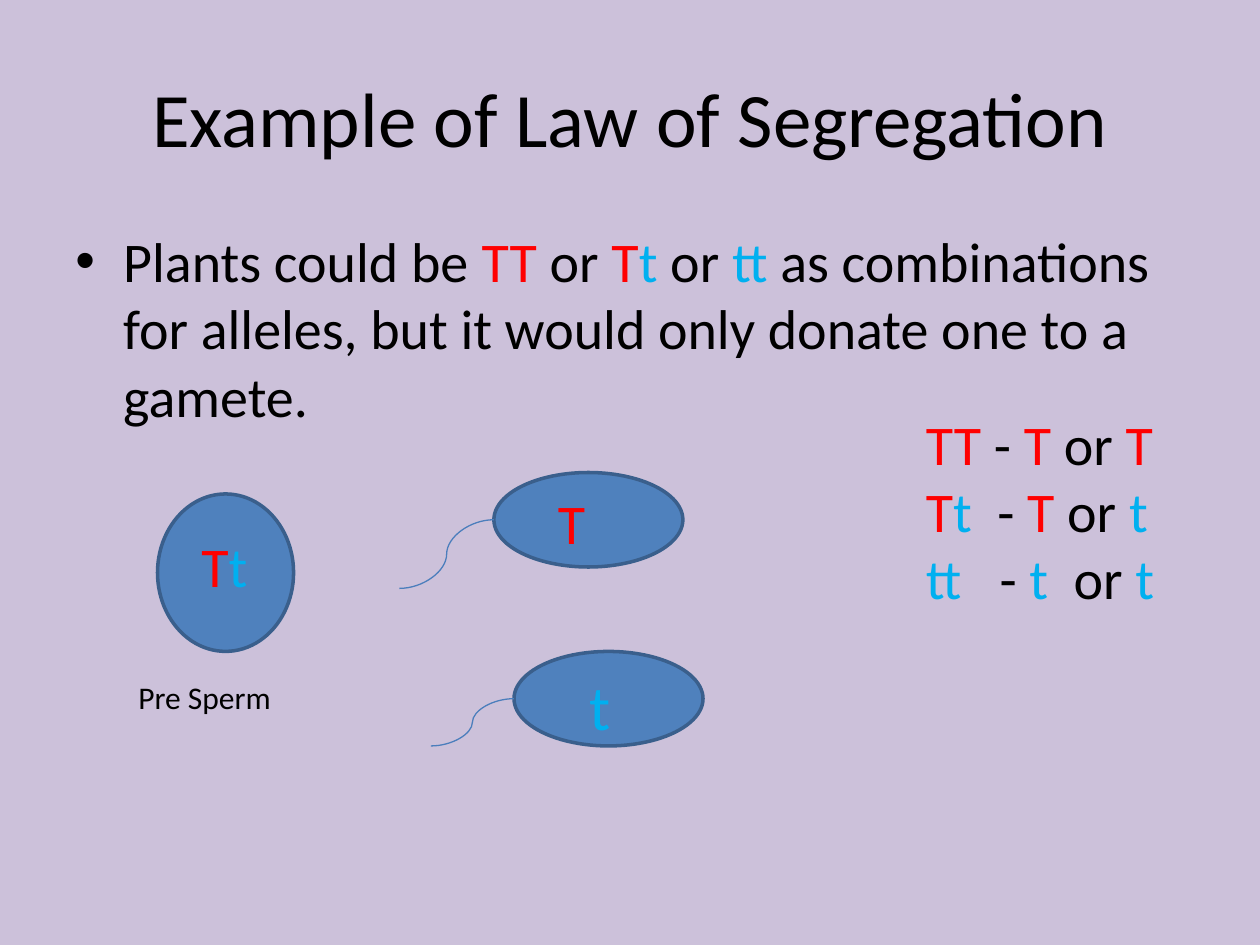
from dataclasses import dataclass

from lxml.etree import SubElement
from pptx import Presentation
from pptx.dml.color import RGBColor
from pptx.enum.shapes import MSO_CONNECTOR, MSO_SHAPE
from pptx.enum.text import MSO_ANCHOR, MSO_AUTO_SIZE, PP_ALIGN
from pptx.oxml.ns import qn
from pptx.util import Inches, Pt


@dataclass(frozen=True)
class Theme:
    font: str = "Calibri"
    background: str = "CCC1DA"
    ink: str = "000000"
    dominant: str = "FF0000"
    recessive: str = "00B0F0"
    cell: str = "4F81BD"
    outline: str = "3A5F8C"
    tail: str = "4B7EBC"
    title_size: int = 44
    body_size: int = 32
    large_size: int = 36
    label_size: int = 18


THEME = Theme()
INK, TALL, SHORT = THEME.ink, THEME.dominant, THEME.recessive

STATEMENT = [
    ("Plants could be ", INK), ("TT ", TALL), ("or ", INK), ("T", TALL),
    ("t", SHORT), (" or ", INK), ("tt", SHORT),
    (" as combinations for alleles, but it would only donate one to a gamete.", INK),
]
OUTCOMES = [
    [("TT", TALL), (" - ", INK), ("T", TALL), (" or", INK), (" T", TALL)],
    [("T", TALL), ("t", SHORT), ("  - ", INK), ("T ", TALL), ("or ", INK), ("t", SHORT)],
    [("tt   ", SHORT), ("- ", INK), ("t  ", SHORT), ("or ", INK), ("t", SHORT)],
]


def set_format(target, values):
    for name, value in values.items():
        setattr(target, name, value)


def write_spans(para, spans, size):
    for text, color in spans:
        span = para.add_run()
        span.text = text
        set_format(span.font, {"name": THEME.font, "size": Pt(size)})
        span.font.color.rgb = RGBColor.from_string(color)


def add_title(page, text):
    title = page.shapes.title
    set_format(title, {"left": Inches(0.5), "top": Inches(0.3),
                       "width": Inches(9), "height": Inches(1.25)})
    title.text_frame.vertical_anchor = MSO_ANCHOR.MIDDLE
    para = title.text_frame.paragraphs[0]
    para.alignment = PP_ALIGN.CENTER
    write_spans(para, [(text, INK)], THEME.title_size)


def add_text(page, place, lines, size=THEME.body_size, auto_size=MSO_AUTO_SIZE.SHAPE_TO_FIT_TEXT):
    box = page.shapes.add_textbox(*map(Inches, place))
    frame = box.text_frame
    set_format(frame, {"word_wrap": True, "auto_size": auto_size})
    for index, spans in enumerate(lines):
        para = frame.add_paragraph() if index else frame.paragraphs[0]
        write_spans(para, spans, size)
    return box


def add_bullet(para):
    properties = para._p.get_or_add_pPr()
    properties.set("marL", str(Inches(0.38)))
    properties.set("indent", str(Inches(-0.38)))
    SubElement(properties, qn("a:buFont"), typeface="Arial")
    SubElement(properties, qn("a:buChar"), char="•")


def add_cell(page, place):
    cell = page.shapes.add_shape(MSO_SHAPE.OVAL, *map(Inches, place))
    cell.shadow.inherit = False
    cell.fill.solid()
    cell.fill.fore_color.rgb = RGBColor.from_string(THEME.cell)
    cell.line.color.rgb = RGBColor.from_string(THEME.outline)
    cell.line.width = Pt(2)


def add_tail(page, place, end):
    left, top, _, height = place
    points = (left, top + height / 2, *end)
    tail = page.shapes.add_connector(MSO_CONNECTOR.CURVE, *map(Inches, points))
    tail.line.color.rgb = RGBColor.from_string(THEME.tail)
    tail.line.width = Pt(0.75)
    SubElement(tail._element.spPr, qn("a:effectLst"))


def add_sperm(page, place, tail_end, letter_place, letter, size):
    add_cell(page, place)
    add_text(page, letter_place, [[letter]], size)
    add_tail(page, place, tail_end)


def main():
    deck = Presentation()
    set_format(deck, {"slide_width": Inches(10), "slide_height": Inches(7.5)})
    page = deck.slides.add_slide(deck.slide_layouts[5])
    page.background.fill.solid()
    page.background.fill.fore_color.rgb = RGBColor.from_string(THEME.background)

    # Title and statement
    add_title(page, "Example of Law of Segregation")
    body = add_text(page, (0.5, 1.75, 9, 4.95), [STATEMENT], auto_size=MSO_AUTO_SIZE.NONE)
    statement = body.text_frame.paragraphs[0]
    statement.space_before = Pt(THEME.body_size * 0.2)
    add_bullet(statement)

    # Parent cell
    add_cell(page, (1.25, 3.92, 1.08, 1.25))
    add_text(page, (1.5, 4.17, 0.67, 0.64), [[("T", TALL), ("t", SHORT)]])
    add_text(page, (1, 5.33, 1.5, 0.4), [[("Pre Sperm", INK)]], THEME.label_size)

    # Possible alleles for each combination
    add_text(page, (7.25, 3.2, 2.25, 1.72), OUTCOMES)

    # Gametes
    add_sperm(page, (3.92, 3.75, 1.5, 0.75), (3.17, 4.67),
              (4.33, 3.83, 0.67, 0.64), ("T", TALL), THEME.body_size)
    add_sperm(page, (4.08, 5.17, 1.5, 0.75), (3.42, 5.92),
              (4.58, 5.25, 0.58, 0.71), ("t", SHORT), THEME.large_size)

    deck.save("out.pptx")


if __name__ == "__main__":
    main()
